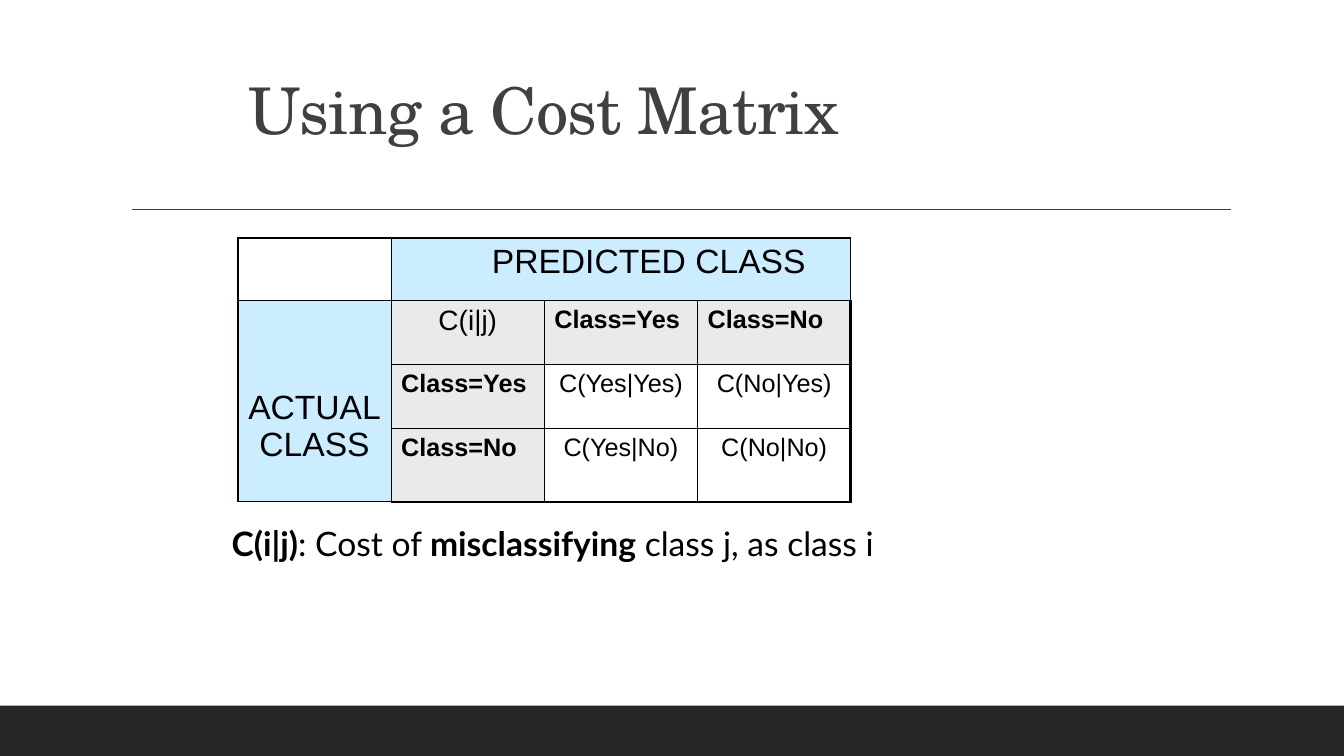
from dataclasses import dataclass

from lxml import etree
from pptx import Presentation
from pptx import util as u
from pptx.dml.color import RGBColor
from pptx.enum import shapes, text
from pptx.oxml.ns import qn


@dataclass(frozen=True)
class Theme:
    """Colours, fonts and type sizes of the slide."""
    ink: str = "000000"
    heading: str = "404040"
    footer: str = "262626"
    axis_fill: str = "CCECFF"
    label_fill: str = "EAEAEA"
    title_font: str = "TeX Gyre Schola"
    table_font: str = "Arial"
    body_font: str = "Lato"
    title_size: float = 46
    large_size: float = 24
    medium_size: float = 20
    cell_size: float = 18
    thin: float = 1
    thick: float = 2.25


@dataclass
class Cell:
    """Content and look of one table cell."""
    content: str
    size: float
    fill: str | None = None
    bold: bool = False
    centred: bool = True
    span: tuple = (1, 1)
    left: float = 0.1
    top: float = 0.05


class SlideBuilder:
    """Draws styled elements on one slide."""

    def __init__(self, slide, theme):
        self.slide = slide
        self.theme = theme

    def add_run(self, paragraph, content, font, size, colour, bold=False):
        run = paragraph.add_run()
        run.text = content
        run.font.name = font
        run.font.size = u.Pt(size)
        run.font.bold = bold
        run.font.color.rgb = RGBColor.from_string(colour)
        return run

    def bar(self, left, top, width, height):
        shape = self.slide.shapes.add_shape(
            shapes.MSO_SHAPE.RECTANGLE,
            *map(u.Inches, (left, top, width, height)))
        shape.shadow.inherit = False
        shape.fill.solid()
        shape.fill.fore_color.rgb = RGBColor.from_string(self.theme.footer)
        shape.line.fill.background()

    def rule(self, left, right, y):
        line = self.slide.shapes.add_connector(
            shapes.MSO_CONNECTOR.STRAIGHT,
            *map(u.Inches, (left, y, right, y)))
        line.line.color.rgb = RGBColor.from_string(self.theme.heading)
        line.line.width = u.Pt(self.theme.thin)
        etree.SubElement(line._element.spPr, qn("a:effectLst"))

    def title(self, content, left, top, width, height):
        shape = self.slide.shapes.title
        shape.left, shape.top, shape.width, shape.height = map(
            u.Inches, (left, top, width, height))
        frame = shape.text_frame
        frame.auto_size = text.MSO_AUTO_SIZE.NONE
        frame.vertical_anchor = text.MSO_ANCHOR.BOTTOM
        paragraph = frame.paragraphs[0]
        paragraph.alignment = text.PP_ALIGN.LEFT
        paragraph.line_spacing = 0.9
        run = self.add_run(paragraph, content, self.theme.title_font,
                           self.theme.title_size, self.theme.heading)
        run.font._element.set("spc", "-50")

    def text_box(self, parts, left, top, width, height):
        shape = self.slide.shapes.add_textbox(
            *map(u.Inches, (left, top, width, height)))
        shape.text_frame.word_wrap = True
        paragraph = shape.text_frame.paragraphs[0]
        for content, bold in parts:
            self.add_run(paragraph, content, self.theme.body_font,
                         self.theme.large_size, self.theme.ink, bold)

    def border(self, cell, row, column, rows, columns):
        outer = {"L": column == 0, "R": column == columns - 1,
                 "T": row == 0, "B": row == rows - 1}
        properties = cell._tc.get_or_add_tcPr()
        for side, is_outer in outer.items():
            width = self.theme.thick if is_outer else self.theme.thin
            line = etree.SubElement(properties, qn(f"a:ln{side}"),
                                    w=str(int(u.Pt(width))))
            fill = etree.SubElement(line, qn("a:solidFill"))
            etree.SubElement(fill, qn("a:srgbClr"), val=self.theme.ink)

    def fill_cell(self, cell, item):
        if item.fill:
            cell.fill.solid()
            cell.fill.fore_color.rgb = RGBColor.from_string(item.fill)
        else:
            cell.fill.background()
        cell.margin_left = u.Inches(item.left)
        cell.margin_top = u.Inches(item.top)
        paragraph = cell.text_frame.paragraphs[0]
        paragraph.alignment = (text.PP_ALIGN.CENTER if item.centred
                               else text.PP_ALIGN.LEFT)
        for index, line in enumerate(item.content.split("\n")):
            if index:
                paragraph.add_line_break()
            if line:
                self.add_run(paragraph, line, self.theme.table_font,
                             item.size, self.theme.ink, item.bold)

    def table(self, items, left, top, column_width, row_heights):
        rows, columns = len(items), len(items[0])
        table = self.slide.shapes.add_table(
            rows, columns, *map(u.Inches, (left, top, column_width * columns,
                                           sum(row_heights)))).table
        table.first_row = table.horz_banding = False
        for column in table.columns:
            column.width = u.Inches(column_width)
        for row, height in zip(table.rows, row_heights):
            row.height = u.Inches(height)
        for r, row_items in enumerate(items):
            for c, item in enumerate(row_items):
                cell = table.cell(r, c)
                self.border(cell, r, c, rows, columns)
                if item is None:
                    continue
                self.fill_cell(cell, item)
                if item.span != (1, 1):
                    down, across = item.span
                    cell.merge(table.cell(r + down - 1, c + across - 1))


def main():
    theme = Theme()
    presentation = Presentation()
    presentation.slide_width = u.Inches(13.33)
    presentation.slide_height = u.Inches(7.5)
    slide = presentation.slides.add_slide(presentation.slide_layouts[5])
    builder = SlideBuilder(slide, theme)

    def label(content):
        return Cell(content, theme.cell_size, theme.label_fill,
                    bold=True, centred=False)

    def cost(content):
        return Cell(content, theme.cell_size)

    predicted = Cell("PREDICTED CLASS", theme.large_size, theme.axis_fill,
                     span=(1, 3), left=0.65)
    actual = Cell("ACTUAL\nCLASS", theme.large_size, theme.axis_fill,
                  span=(3, 1), top=0.88)
    corner = Cell("C(i|j)", theme.medium_size, theme.label_fill)
    cost_matrix = [
        [cost(""), predicted, None, None],
        [actual, corner, label("Class=Yes"), label("Class=No")],
        [None, label("Class=Yes"), cost("C(Yes|Yes)"), cost("C(No|Yes)")],
        [None, label("Class=No"), cost("C(Yes|No)"), cost("C(No|No)")],
    ]

    builder.bar(0, 7, 13.33, 0.5)
    builder.rule(1.31, 12.21, 2.08)
    builder.title("Using a Cost Matrix", 2.36, 0.72, 7.52, 0.8)
    builder.table(cost_matrix, 2.36, 2.36, 1.52, [0.62, 0.64, 0.63, 0.73])
    builder.text_box([("C(i|j)", True), (": Cost of ", False),
                      ("misclassifying", True),
                      (" class j, as class i", False)], 2.2, 5.14, 8.8, 1)
    presentation.save("out.pptx")


if __name__ == "__main__":
    main()
